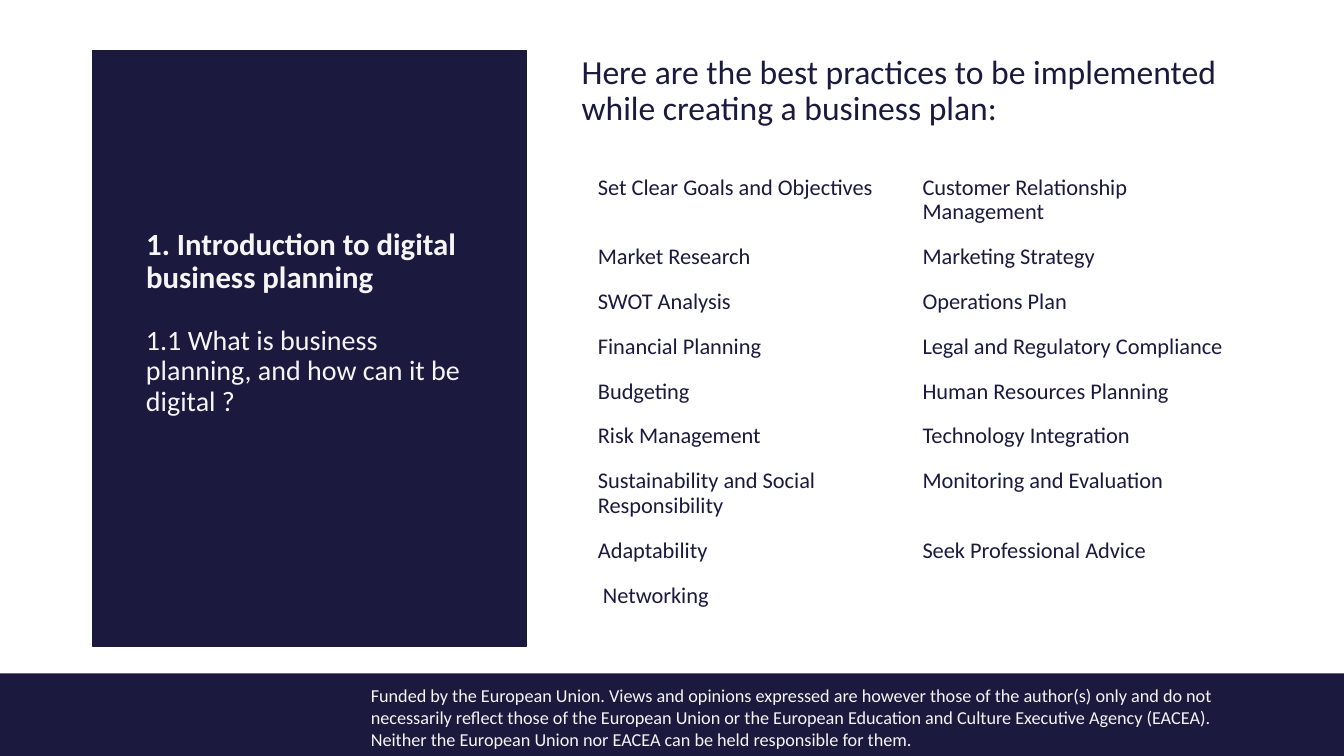
from pptx import Presentation
from pptx.dml.color import RGBColor
from pptx.enum.shapes import MSO_SHAPE
from pptx.enum.text import MSO_ANCHOR, MSO_AUTO_SIZE, PP_ALIGN
from pptx.util import Inches, Pt

RECTANGLE = MSO_SHAPE.RECTANGLE
TOP, BOTTOM = MSO_ANCHOR.TOP, MSO_ANCHOR.BOTTOM
NO_AUTOFIT = MSO_AUTO_SIZE.NONE
LEFT = PP_ALIGN.LEFT

COLORS = {"navy": "1B193E", "light": "F5F5F5"}
TITLE_ONLY = 5

FUNDING = (
    "Funded by the European Union. Views and opinions expressed are however those of the "
    "author(s) only and do not necessarily reflect those of the European Union or the European "
    "Education and Culture Executive Agency (EACEA). Neither the European Union nor EACEA can "
    "be held responsible for them."
)
PRACTICES = [
    ("Set Clear Goals and Objectives", "Customer Relationship Management"),
    ("Market Research", "Marketing Strategy"),
    ("SWOT Analysis", "Operations Plan"),
    ("Financial Planning", "Legal and Regulatory Compliance"),
    ("Budgeting", "Human Resources Planning"),
    ("Risk Management", "Technology Integration"),
    ("Sustainability and Social Responsibility", "Monitoring and Evaluation"),
    ("Adaptability", "Seek Professional Advice"),
    ("Networking", ""),
]


class SlideBuilder:
    """Holds the style and the current slide, and adds its elements."""

    font_name = "Calibri"

    def __init__(self, slide):
        self.slide = slide

    def color(self, name):
        return RGBColor.from_string(COLORS[name])

    def fill_text(self, frame, text, size, color, bold=False, spacing=0.9):
        paragraph = frame.paragraphs[0]
        paragraph.alignment = LEFT
        paragraph.line_spacing = spacing
        run = paragraph.add_run()
        run.text = text
        run.font.color.rgb = self.color(color)
        style = {"name": self.font_name, "size": Pt(size), "bold": bold}
        for attribute, value in style.items():
            setattr(run.font, attribute, value)

    def set_frame(self, frame, anchor=TOP):
        layout = {
            "word_wrap": True,
            "auto_size": NO_AUTOFIT,
            "vertical_anchor": anchor,
            "margin_left": Inches(0.1),
            "margin_right": Inches(0.1),
            "margin_top": Inches(0.05),
            "margin_bottom": Inches(0.05),
        }
        for attribute, value in layout.items():
            setattr(frame, attribute, value)

    def panel(self, box, outlined=False):
        panel = self.slide.shapes.add_shape(RECTANGLE, *map(Inches, box))
        panel.shadow.inherit = False
        panel.fill.solid()
        panel.fill.fore_color.rgb = self.color("navy")
        if outlined:
            panel.line.color.rgb = self.color("navy")
            panel.line.width = Pt(1)
        else:
            panel.line.fill.background()

    def title(self, box, text, size):
        title = self.slide.shapes.title
        title.element.getparent().append(title.element)
        for attribute, value in zip(("left", "top", "width", "height"), box):
            setattr(title, attribute, Inches(value))
        title.fill.solid()
        title.fill.fore_color.rgb = self.color("navy")
        self.set_frame(title.text_frame, BOTTOM)
        self.fill_text(title.text_frame, text, size, "light", bold=True)

    def text(self, box, text, size, color, spacing=0.9):
        frame = self.slide.shapes.add_textbox(*map(Inches, box)).text_frame
        self.set_frame(frame)
        self.fill_text(frame, text, size, color, spacing=spacing)

    def table(self, left, top, column_width, row_heights, rows, size):
        columns = len(rows[0])
        box = (left, top, columns * column_width, sum(row_heights))
        table = self.slide.shapes.add_table(len(rows), columns, *map(Inches, box)).table
        table.first_row = table.horz_banding = False
        for row, height, entries in zip(table.rows, row_heights, rows):
            row.height = Inches(height)
            for cell, entry in zip(row.cells, entries):
                cell.fill.background()
                for side in ("left", "right", "top", "bottom"):
                    setattr(cell, f"margin_{side}", Inches(0.1))
                self.fill_text(cell.text_frame, entry, size, "navy")
        return table


def main():
    presentation = Presentation()
    presentation.slide_width = Inches(13.33)
    presentation.slide_height = Inches(7.5)
    slide = presentation.slides.add_slide(presentation.slide_layouts[TITLE_ONLY])
    builder = SlideBuilder(slide)

    builder.panel((0.92, 0.5, 4.3, 5.91), outlined=True)
    builder.panel((0, 6.68, 13.33, 0.82))
    builder.text((3.58, 6.74, 8.84, 0.76), FUNDING, 13, "light", spacing=1.0)
    builder.title((1.35, 1.95, 3.43, 1.03), "1. Introduction to digital business planning", 22)
    builder.text((1.35, 3.19, 3.43, 2.81),
                 "1.1 What is business planning, and how can it be digital ?", 20, "light")
    builder.text((5.67, 0.5, 6.75, 5.91),
                 "Here are the best practices to be implemented while creating a business plan:",
                 24, "navy")
    row_heights = [0.63] + [0.42] * (len(PRACTICES) - 1)
    practices = builder.table(5.83, 1.64, 3.22, row_heights, PRACTICES, 16)
    networking = practices.cell(len(PRACTICES) - 1, 0)
    networking.margin_left = Inches(0.15)

    presentation.save("out.pptx")


if __name__ == "__main__":
    main()
